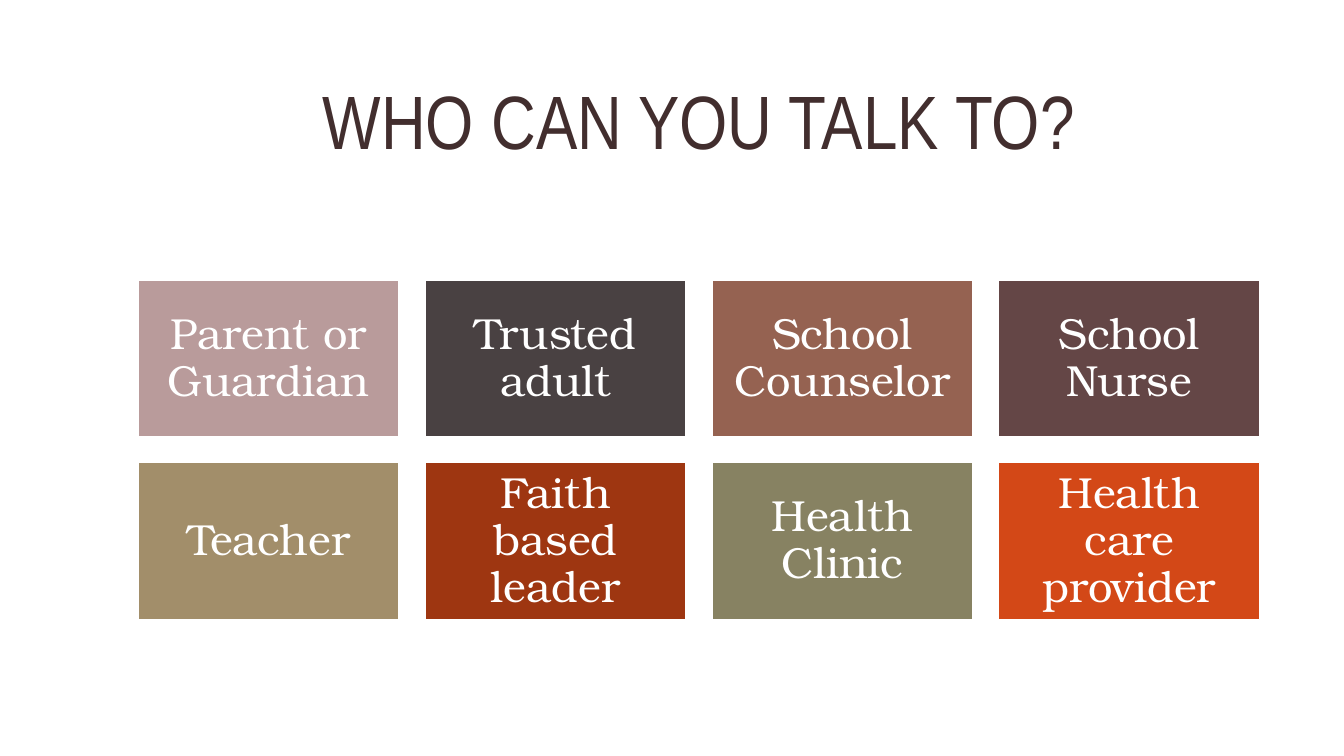
import pptx
import pptx.dml.color
import pptx.enum.shapes
import pptx.enum.text
import pptx.util

Cm = pptx.util.Cm
Pt = pptx.util.Pt
RGBColor = pptx.dml.color.RGBColor

WHITE = RGBColor(0xFF, 0xFF, 0xFF)
PLUM = RGBColor(0x42, 0x2E, 0x2E)
ROSE = RGBColor(0xB9, 0x9B, 0x9B)
CHARCOAL = RGBColor(0x49, 0x41, 0x42)
CLAY = RGBColor(0x95, 0x62, 0x51)
MAROON = RGBColor(0x64, 0x46, 0x46)
SAND = RGBColor(0xA2, 0x8E, 0x6A)
RUST = RGBColor(0x9E, 0x36, 0x11)
OLIVE = RGBColor(0x87, 0x82, 0x62)
ORANGE = RGBColor(0xD3, 0x48, 0x17)

TITLE_FONT = "Arial Narrow"
CARD_FONT = "TeX Gyre Bonum"
LEFT, CARDS_TOP = 3.48, 7.06
CARD_WIDTH, CARD_HEIGHT = 6.58, 3.95
GAP = 0.65
COLUMNS = 4

PEOPLE = [
    ("Parent or Guardian", ROSE),
    ("Trusted adult", CHARCOAL),
    ("School Counselor", CLAY),
    ("School Nurse", MAROON),
    ("Teacher", SAND),
    ("Faith based leader", RUST),
    ("Health Clinic", OLIVE),
    ("Health care provider", ORANGE),
]


def set_text(sp, text, font, size, color):
    """Write one centred, wrapped paragraph into a shape."""
    tf = sp.text_frame
    tf.text = text
    tf.word_wrap = True
    tf.vertical_anchor = pptx.enum.text.MSO_ANCHOR.MIDDLE
    p = tf.paragraphs[0]
    p.alignment = pptx.enum.text.PP_ALIGN.CENTER
    p.line_spacing = 0.9
    r = p.runs[0]
    r.font.name = font
    r.font.size = Pt(size)
    r.font.color.rgb = color


def add_title(s, text):
    """Add the slide heading."""
    sp = s.shapes.add_textbox(Cm(LEFT), Cm(1.07), Cm(28.27), Cm(4.14))
    set_text(sp, text, TITLE_FONT, 54, PLUM)


def add_card(s, left, top, text, color):
    """Add one coloured card with its label."""
    sp = s.shapes.add_shape(
        pptx.enum.shapes.MSO_SHAPE.RECTANGLE,
        Cm(left), Cm(top), Cm(CARD_WIDTH), Cm(CARD_HEIGHT),
    )
    sp.shadow.inherit = False
    sp.fill.solid()
    sp.fill.fore_color.rgb = color
    sp.line.color.rgb = WHITE
    sp.line.width = Pt(1)
    set_text(sp, text, CARD_FONT, 31, WHITE)
    tf = sp.text_frame
    tf.margin_left = tf.margin_right = Cm(0.33)
    tf.margin_top = tf.margin_bottom = Cm(0.33)


def main():
    """Build the slide and save it."""
    prs = pptx.Presentation()
    prs.slide_width = Cm(33.87)
    prs.slide_height = Cm(19.05)
    s = prs.slides.add_slide(prs.slide_layouts[6])
    add_title(s, "WHO CAN YOU TALK TO?")
    for i, (text, color) in enumerate(PEOPLE):
        row, column = divmod(i, COLUMNS)
        left = LEFT + column * (CARD_WIDTH + GAP)
        top = CARDS_TOP + row * (CARD_HEIGHT + GAP)
        add_card(s, left, top, text, color)
    prs.save("out.pptx")


if __name__ == "__main__":
    main()
